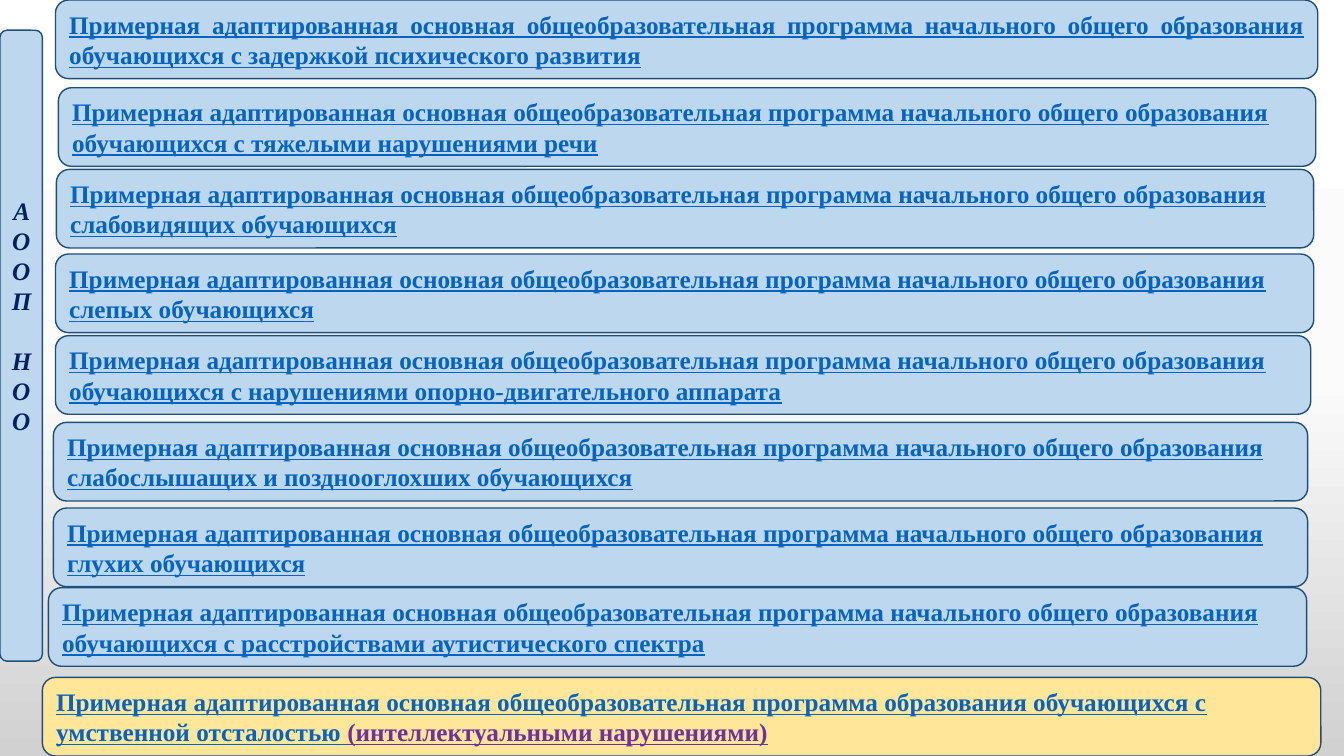
from copy import deepcopy
from dataclasses import dataclass

from pptx import Presentation
from pptx import util as u
from pptx.dml.color import RGBColor
from pptx.enum import shapes, text
from pptx.oxml.ns import qn

PX = u.Inches(1) // 100


@dataclass(frozen=True)
class Theme:
    font: str = "Times New Roman"
    size: int = 18
    outline_width: int = 1
    blue: str = "BDD7EE"
    yellow: str = "FFE699"
    outline: str = "1F4E79"
    link: str = "0563C1"
    accent: str = "7030A0"
    label: str = "002060"
    background: tuple = ((0, "FFFFFF"), (0.5, "FBFBFB"), (1, "D1D1D1"))


@dataclass(frozen=True)
class Program:
    left: int
    top: int
    width: int
    learners: str
    align: text.PP_ALIGN = text.PP_ALIGN.LEFT


THEME = Theme()
BAR_HEIGHT = 78
PROGRAM = "Примерная адаптированная основная общеобразовательная программа "
PRIMARY = PROGRAM + "начального общего образования "
PROGRAMS = (
    Program(55, 0, 1252, "обучающихся с задержкой психического развития",
            text.PP_ALIGN.JUSTIFY),
    Program(58, 87, 1247, "обучающихся с тяжелыми нарушениями речи"),
    Program(56, 168, 1247, "слабовидящих обучающихся"),
    Program(55, 252, 1248, "слепых обучающихся"),
    Program(55, 333, 1245, "обучающихся с нарушениями опорно-двигательного аппарата"),
    Program(53, 419, 1244, "слабослышащих и позднооглохших обучающихся"),
    Program(53, 504, 1244, "глухих обучающихся"),
    Program(48, 583, 1248, "обучающихся с расстройствами аутистического спектра"),
)


def color(value: str) -> RGBColor:
    return RGBColor.from_string(value)


def paint_background(slide) -> None:
    fill = slide.background.fill
    fill.gradient()
    fill.gradient_angle = 270
    stop_list = slide.element.find(".//" + qn("a:gsLst"))
    stop_list.append(deepcopy(stop_list[0]))
    for stop, (position, value) in zip(fill.gradient_stops, THEME.background):
        stop.position = position
        stop.color.rgb = color(value)


def add_box(slide, left: int, top: int, width: int, height: int, fill: str):
    shape = slide.shapes.add_shape(
        shapes.MSO_SHAPE.ROUNDED_RECTANGLE,
        left * PX, top * PX, width * PX, height * PX)
    shape.shadow.inherit = False
    shape.fill.solid()
    shape.fill.fore_color.rgb = color(fill)
    shape.line.color.rgb = color(THEME.outline)
    shape.line.width = u.Pt(THEME.outline_width)
    shape.text_frame.word_wrap = True
    shape.text_frame.vertical_anchor = text.MSO_ANCHOR.MIDDLE
    return shape


def style(paragraph, align: text.PP_ALIGN, value: str) -> None:
    paragraph.alignment = align
    font = paragraph.font
    font.name, font.size, font.bold = THEME.font, u.Pt(THEME.size), True
    font.color.rgb = color(value)
    for run in paragraph.runs:
        run.font.color.rgb = color(value)


def add_program(slide, program: Program, title: str, fill: str):
    shape = add_box(slide, program.left, program.top, program.width, BAR_HEIGHT, fill)
    shape.text_frame.auto_size = text.MSO_AUTO_SIZE.SHAPE_TO_FIT_TEXT
    paragraph = shape.text_frame.paragraphs[0]
    paragraph.add_run().text = title + program.learners
    style(paragraph, program.align, THEME.link)
    paragraph.font.underline = True
    return paragraph


def add_label(slide) -> None:
    frame = add_box(slide, 0, 30, 42, 626, THEME.blue).text_frame
    frame.margin_bottom = 65 * PX
    # The narrow box wraps each word into a column of letters
    frame.text = "АООП\nНОО"
    for paragraph in frame.paragraphs:
        style(paragraph, text.PP_ALIGN.CENTER, THEME.label)
        paragraph.font.italic = True
    frame.paragraphs[1].space_before = u.Pt(21)


def main() -> None:
    presentation = Presentation()
    presentation.slide_width = 1333 * PX
    presentation.slide_height = 750 * PX
    slide = presentation.slides.add_slide(presentation.slide_layouts[6])
    paint_background(slide)

    # Primary education programs
    for program in PROGRAMS:
        add_program(slide, program, PRIMARY, THEME.blue)

    # Side label
    add_label(slide)

    # Program for learners with intellectual disability
    paragraph = add_program(
        slide, Program(42, 672, 1268, "умственной отсталостью "),
        PROGRAM + "образования обучающихся с ", THEME.yellow)
    run = paragraph.add_run()
    run.text = "(интеллектуальными нарушениями)"
    run.font.color.rgb = color(THEME.accent)

    presentation.save("out.pptx")


if __name__ == "__main__":
    main()
